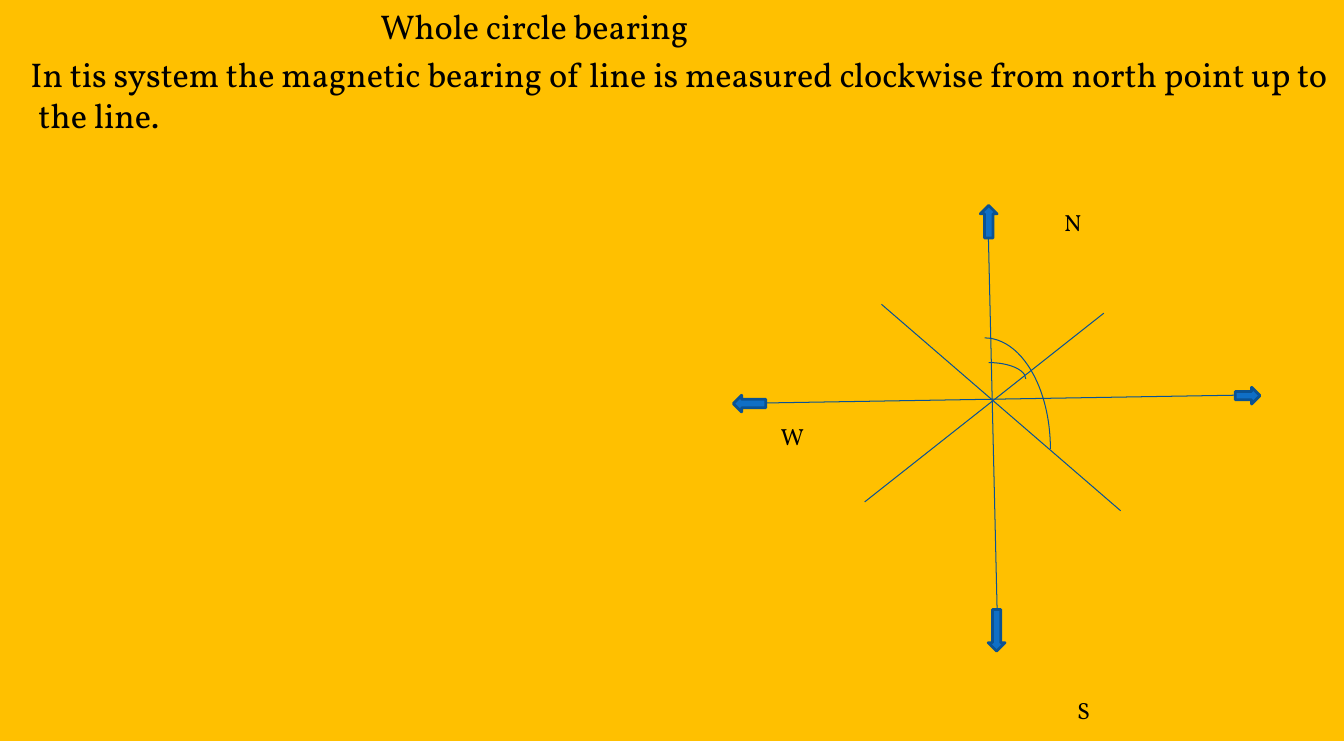
from pptx import Presentation
from pptx.dml.color import RGBColor
from pptx.enum.shapes import MSO_CONNECTOR, MSO_SHAPE
from pptx.enum.text import MSO_ANCHOR, PP_ALIGN
from pptx.oxml.ns import qn
from pptx.util import Inches, Pt
from lxml import etree

FONT = "Vollkorn"
BLACK, AMBER = "000000", "FFC000"
ARROW_FILL, ARROW_LINE, THIN_LINE = "0F6FC6", "0B5292", "095295"


def color(value):
    return RGBColor.from_string(value)


def style_line(line, value, width):
    line.color.rgb = color(value)
    line.width = Pt(width)


def style_text(paragraph, text, size):
    paragraph.text = text
    paragraph.alignment = PP_ALIGN.LEFT
    paragraph.font.name = FONT
    paragraph.font.size = Pt(size)
    paragraph.font.color.rgb = color(BLACK)


def add_plain_shape(slide, kind, left, top, width, height):
    shape = slide.shapes.add_shape(
        kind, Inches(left), Inches(top), Inches(width), Inches(height))
    shape.shadow.inherit = False
    return shape


def add_definition(slide, left, top, width, height):
    """Amber panel with the heading and the definition."""
    panel = add_plain_shape(slide, MSO_SHAPE.RECTANGLE, left, top, width, height)
    panel.fill.solid()
    panel.fill.fore_color.rgb = color(AMBER)
    panel.line.fill.background()
    frame = panel.text_frame
    frame.word_wrap = True
    frame.vertical_anchor = MSO_ANCHOR.TOP
    # Text, left margin, first-line indent
    lines = [
        ("Whole circle bearing", 3.75, 0),
        ("In tis system the magnetic bearing of line is measured clockwise "
         "from north point up to the line.", 0.29, -0.08),
    ]
    for index, (text, margin, indent) in enumerate(lines):
        paragraph = frame.add_paragraph() if index else frame.paragraphs[0]
        style_text(paragraph, text, 25)
        paragraph.space_before = Pt(5)
        properties = paragraph._p.get_or_add_pPr()
        properties.set("marL", str(Inches(margin)))
        properties.set("indent", str(Inches(indent)))


def add_compass(slide, left, top):
    """Compass axes, two survey lines and their bearing arcs."""
    # Axes and survey lines
    for x1, y1, x2, y2 in [
        (3, 0.33, 3.09, 4.17),
        (0.67, 2.08, 5.5, 2),
        (1.92, 1.08, 4.34, 3.17),
        (1.75, 3.08, 4.17, 1.17),
    ]:
        connector = slide.shapes.add_connector(
            MSO_CONNECTOR.STRAIGHT, Inches(left + x1), Inches(top + y1),
            Inches(left + x2), Inches(top + y2))
        style_line(connector.line, THIN_LINE, 0.75)
        etree.SubElement(connector._element.spPr, qn("a:effectLst"))

    # Arrows at the ends of the axes
    for kind, x, y, width, height in [
        (MSO_SHAPE.UP_ARROW, 2.92, 0.08, 0.17, 0.33),
        (MSO_SHAPE.RIGHT_ARROW, 5.5, 1.92, 0.25, 0.17),
        (MSO_SHAPE.DOWN_ARROW, 3, 4.17, 0.17, 0.42),
        (MSO_SHAPE.LEFT_ARROW, 0.42, 2, 0.33, 0.17),
    ]:
        arrow = add_plain_shape(slide, kind, left + x, top + y, width, height)
        arrow.fill.solid()
        arrow.fill.fore_color.rgb = color(ARROW_FILL)
        style_line(arrow.line, ARROW_LINE, 2)

    # Bearing arcs
    for x, y, width, height in [(2.63, 1.67, 0.75, 0.33), (2.3, 1.42, 1.33, 2.25)]:
        arc = add_plain_shape(slide, MSO_SHAPE.ARC, left + x, top + y, width, height)
        arc.fill.background()
        style_line(arc.line, THIN_LINE, 0.75)

    # Direction letters
    for letter, x, y in [("N", 3.67, 0.06), ("W", 0.8, 2.22), ("S", 3.8, 5)]:
        label = slide.shapes.add_textbox(
            Inches(left + x), Inches(top + y), Inches(0.88), Inches(0.39))
        label.text_frame.word_wrap = True
        style_text(label.text_frame.paragraphs[0], letter, 17)


def main():
    presentation = Presentation()
    presentation.slide_width = Inches(13.6)
    presentation.slide_height = Inches(7.5)
    slide = presentation.slides.add_slide(presentation.slide_layouts[6])
    add_definition(slide, 0, 0, 13.6, 7.5)
    add_compass(slide, 7, 2)
    presentation.save("out.pptx")


if __name__ == "__main__":
    main()
